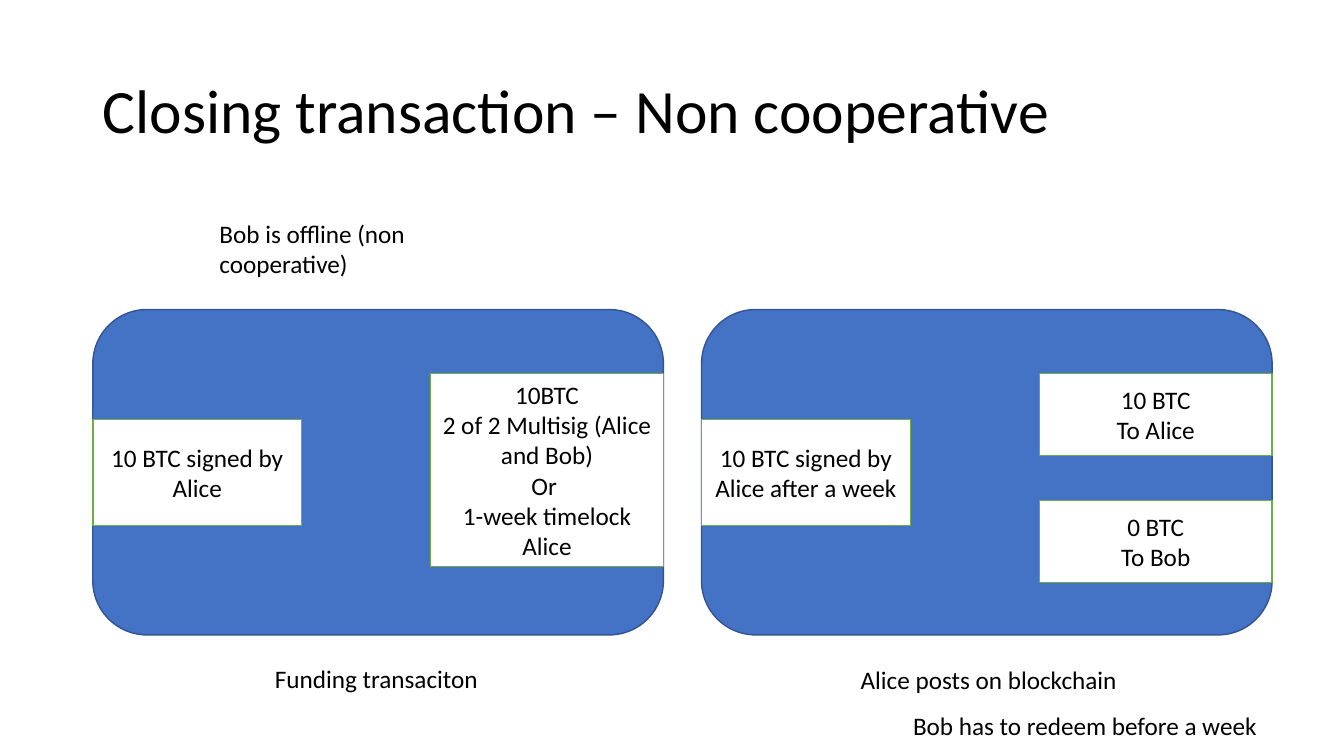
from dataclasses import dataclass

from pptx import Presentation
from pptx.dml.color import RGBColor
from pptx.enum.shapes import MSO_SHAPE
from pptx.enum.text import MSO_ANCHOR, MSO_AUTO_SIZE, PP_ALIGN
from pptx.util import Cm, Pt


@dataclass(frozen=True)
class Theme:
    """Colours, typeface and type sizes of the slide."""

    font: str = "Calibri"
    text: RGBColor = RGBColor(0x00, 0x00, 0x00)
    panel: RGBColor = RGBColor(0x44, 0x72, 0xC4)
    panel_line: RGBColor = RGBColor(0x32, 0x54, 0x91)
    box: RGBColor = RGBColor(0xFF, 0xFF, 0xFF)
    box_line: RGBColor = RGBColor(0x70, 0xAD, 0x47)
    title_size: int = 44
    body_size: int = 18
    line_width: int = 1


THEME = Theme()
PANEL_TOP, PANEL_WIDTH, PANEL_HEIGHT = 7.8, 14.38, 8.2
INPUT_TOP, INPUT_WIDTH, INPUT_HEIGHT = 10.57, 5.26, 2.67
OUTPUT_WIDTH = 5.87


def write_lines(text_frame, lines, size, alignment):
    """Write one paragraph for each line."""
    for index, line in enumerate(lines):
        paragraph = text_frame.add_paragraph() if index else text_frame.paragraphs[0]
        paragraph.alignment = alignment
        run = paragraph.add_run()
        run.text = line
        run.font.name = THEME.font
        run.font.size = Pt(size)
        run.font.color.rgb = THEME.text


def add_block(slide, kind, left, top, width, height, fill, line):
    """Add a filled and outlined shape."""
    shape = slide.shapes.add_shape(kind, Cm(left), Cm(top), Cm(width), Cm(height))
    shape.shadow.inherit = False
    shape.fill.solid()
    shape.fill.fore_color.rgb = fill
    shape.line.color.rgb = line
    shape.line.width = Pt(THEME.line_width)
    return shape


def add_box(slide, left, top, width, height, lines):
    """Add a white box with centred text."""
    shape = add_block(slide, MSO_SHAPE.RECTANGLE, left, top, width, height,
                      THEME.box, THEME.box_line)
    shape.text_frame.word_wrap = True
    shape.text_frame.vertical_anchor = MSO_ANCHOR.MIDDLE
    write_lines(shape.text_frame, lines, THEME.body_size, PP_ALIGN.CENTER)


def add_transaction(slide, left, input_text, outputs):
    """Add a transaction panel with its input on the left and outputs on the right."""
    add_block(slide, MSO_SHAPE.ROUNDED_RECTANGLE, left, PANEL_TOP, PANEL_WIDTH,
              PANEL_HEIGHT, THEME.panel, THEME.panel_line)
    add_box(slide, left, INPUT_TOP, INPUT_WIDTH, INPUT_HEIGHT, [input_text])
    output_left = left + PANEL_WIDTH - OUTPUT_WIDTH
    for top, height, lines in outputs:
        add_box(slide, output_left, top, OUTPUT_WIDTH, height, lines)


def add_label(slide, left, top, width, height, text, wrap=False):
    """Add a text box that grows with its text."""
    label = slide.shapes.add_textbox(Cm(left), Cm(top), Cm(width), Cm(height))
    label.text_frame.word_wrap = wrap
    label.text_frame.auto_size = MSO_AUTO_SIZE.SHAPE_TO_FIT_TEXT
    write_lines(label.text_frame, [text], THEME.body_size, PP_ALIGN.LEFT)


def add_title(slide, text):
    """Add the slide title."""
    title = slide.shapes.add_textbox(Cm(2.34), Cm(1.02), Cm(29.21), Cm(3.68))
    title.text_frame.word_wrap = True
    title.text_frame.vertical_anchor = MSO_ANCHOR.MIDDLE
    write_lines(title.text_frame, [text], THEME.title_size, PP_ALIGN.LEFT)
    title.text_frame.paragraphs[0].line_spacing = 0.9


def main():
    """Build and save the slide."""
    presentation = Presentation()
    presentation.slide_width = Cm(33.87)
    presentation.slide_height = Cm(19.05)
    slide = presentation.slides.add_slide(presentation.slide_layouts[6])
    add_title(slide, "Closing transaction – Non cooperative")
    add_transaction(slide, 17.68, "10 BTC signed by Alice after a week", [
        (9.42, 2.06, ["10 BTC", "To Alice"]),
        (12.62, 2.06, ["0 BTC", "To Bob"]),
    ])
    add_transaction(slide, 2.34, "10 BTC signed by Alice", [
        (9.42, 4.85, ["10BTC", "2 of 2 Multisig (Alice and Bob)", "Or ",
                      "1-week timelock Alice"]),
    ])
    add_label(slide, 21.44, 16.61, 7.04, 1.02, "Alice posts on blockchain")
    add_label(slide, 6.68, 16.59, 5.69, 1.02, "Funding transaciton")
    add_label(slide, 5.28, 5.38, 5.87, 1.8, "Bob is offline (non cooperative)", wrap=True)
    add_label(slide, 22.76, 17.78, 9.3, 1.02, "Bob has to redeem before a week")
    presentation.save("out.pptx")


if __name__ == "__main__":
    main()
